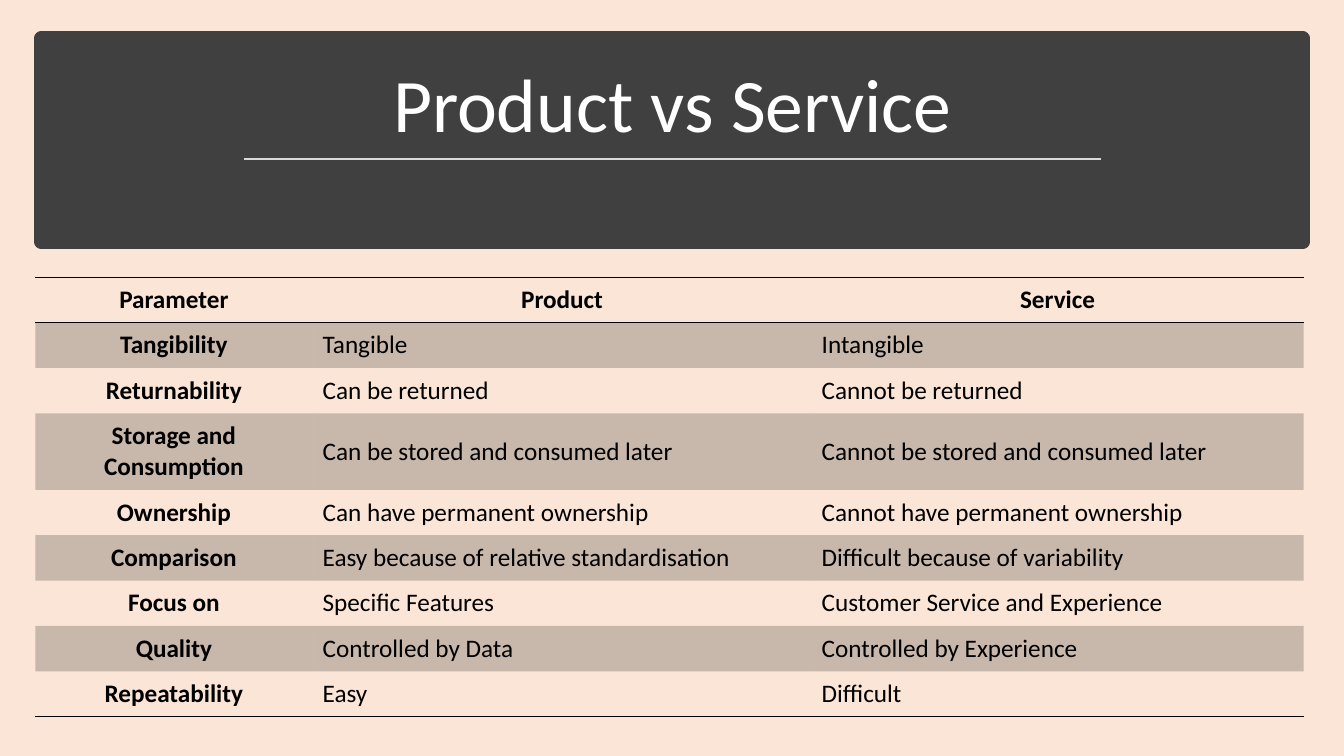
from lxml.etree import SubElement as Sub
from pptx import Presentation
from pptx.dml.color import RGBColor as RGB
from pptx.enum.shapes import MSO_CONNECTOR as Link, MSO_SHAPE as Shape
from pptx.enum.text import MSO_ANCHOR as Anchor, PP_ALIGN as Align
from pptx.oxml import parse_xml
from pptx.oxml.ns import nsdecls, qn
from pptx.util import Pt

PX = 9144
PEACH = RGB(0xFB, 0xE5, 0xD6)
DARK = RGB(0x40, 0x40, 0x40)
GREY = RGB(0xD9, 0xD9, 0xD9)
WHITE = RGB(0xFF, 0xFF, 0xFF)
BLACK = RGB(0, 0, 0)
PLAIN = "{2D5ABB26-0587-4C30-8999-92F81FD0307C}"


def write(frame, text, size=18, color=BLACK, bold=False, align=Align.LEFT, space=1.0):
    para = frame.paragraphs[0]
    para.alignment = align
    para.line_spacing = space
    run = para.add_run()
    run.text = text
    run.font.name = "Calibri"
    run.font.size = Pt(size)
    run.font.bold = bold
    run.font.color.rgb = color


def rule(cell, *sides):
    props = cell._tc.get_or_add_tcPr()
    for spot, side in enumerate(sides):
        props.insert(spot, parse_xml(
            f'<a:{side} {nsdecls("a")} w="12700"><a:solidFill>'
            f'<a:srgbClr val="{BLACK}"/></a:solidFill></a:{side}>'))


deck = Presentation()
deck.slide_width, deck.slide_height = 1333 * PX, 750 * PX
slide = deck.slides.add_slide(deck.slide_layouts[6])
slide.background.fill.solid()
slide.background.fill.fore_color.rgb = PEACH
shapes = slide.shapes

band = shapes.add_shape(Shape.RECTANGLE, 41 * PX, 38 * PX, 1251 * PX, 202 * PX)
band.shadow.inherit = False
band.fill.solid()
band.fill.fore_color.rgb = DARK
band.line.color.rgb = DARK
band.line.width = Pt(10)

title = shapes.add_textbox(58 * PX, 51 * PX, 1218 * PX, 102 * PX).text_frame
title.word_wrap = True
title.vertical_anchor = Anchor.BOTTOM
write(title, "Product vs Service", size=54, color=WHITE, align=Align.CENTER, space=0.9)

line = shapes.add_connector(Link.STRAIGHT, 242 * PX, 158 * PX, 1092 * PX, 158 * PX)
line.line.color.rgb = GREY
line.line.width = Pt(1.75)
Sub(line._element.spPr, qn("a:effectLst"))

ROWS = [
    ("Parameter", "Product", "Service"),
    ("Tangibility", "Tangible", "Intangible"),
    ("Returnability", "Can be returned", "Cannot be returned"),
    ("Storage and Consumption", "Can be stored and consumed later",
     "Cannot be stored and consumed later"),
    ("Ownership", "Can have permanent ownership", "Cannot have permanent ownership"),
    ("Comparison", "Easy because of relative standardisation",
     "Difficult because of variability"),
    ("Focus on", "Specific Features", "Customer Service and Experience"),
    ("Quality", "Controlled by Data", "Controlled by Experience"),
    ("Repeatability", "Easy", "Difficult"),
]
WIDTHS = [275, 495, 488]
TALL = 3

grid = shapes.add_table(len(ROWS), len(WIDTHS), 35 * PX, 275 * PX,
                        sum(WIDTHS) * PX, 436 * PX).table
grid._tbl.tblPr.find(qn("a:tableStyleId")).text = PLAIN
for col, width in zip(grid.columns, WIDTHS):
    col.width = width * PX

for r, row in enumerate(ROWS):
    grid.rows[r].height = (76 if r == TALL else 45) * PX
    for c, text in enumerate(row):
        cell = grid.cell(r, c)
        cell.vertical_anchor = Anchor.MIDDLE
        head = r == 0 or c == 0
        write(cell.text_frame, text, bold=head,
              align=Align.CENTER if head else Align.LEFT)
        if r % 2:
            cell.fill.solid()
            cell.fill.fore_color.rgb = BLACK
            tint = cell._tc.tcPr.find(".//" + qn("a:srgbClr"))
            Sub(tint, qn("a:alpha"), val="20000")
        else:
            cell.fill.background()
        if r == 0:
            rule(cell, "lnT", "lnB")
        elif r == len(ROWS) - 1:
            rule(cell, "lnB")

deck.save("out.pptx")
